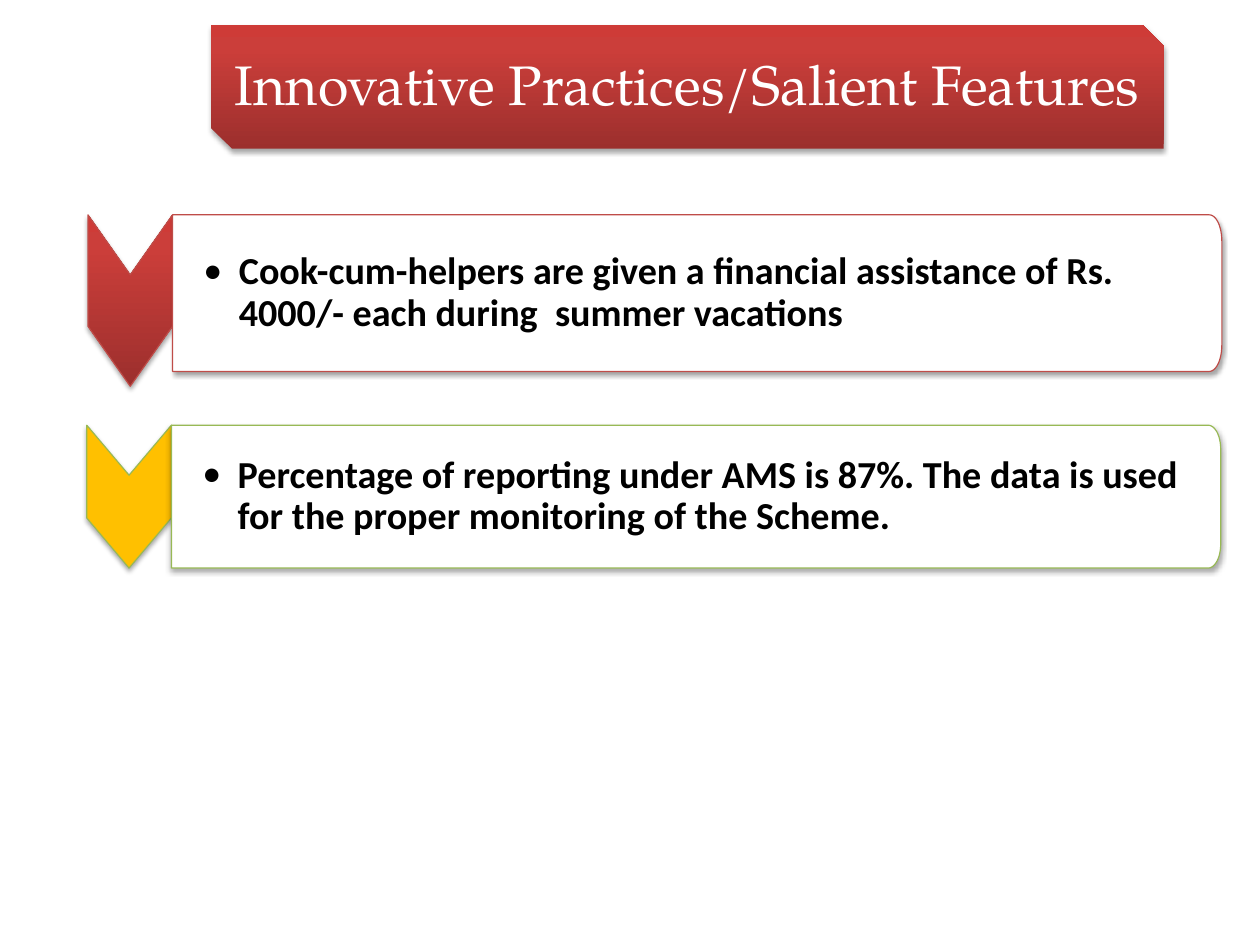
from math import cos, pi, sin

from lxml.etree import SubElement as Sub
from pptx import Presentation
from pptx.dml.color import RGBColor
from pptx.enum.shapes import MSO_SHAPE as Shape
from pptx.enum.text import MSO_ANCHOR as Anchor, PP_ALIGN as Align
from pptx.oxml.ns import qn
from pptx.util import Inches, Pt

WHITE = RGBColor(0xFF, 0xFF, 0xFF)
BLACK = RGBColor(0, 0, 0)
RED = RGBColor(0xBF, 0x4C, 0x48)
GREEN = RGBColor(0x98, 0xB9, 0x55)
GOLD = RGBColor(0xFF, 0xC0, 0x00)
FADE = [
    (0, RGBColor(0x9C, 0x2F, 0x2D)),
    (80, RGBColor(0xCB, 0x3E, 0x3A)),
    (100, RGBColor(0xCE, 0x3B, 0x37)),
]
WIDE = 0.74

ROWS = [
    (0.77, 1.88, 1.5, 1.37, None, RED,
     "Cook-cum-helpers are given a financial assistance of Rs. "
     "4000/- each during  summer vacations"),
    (0.76, 3.72, 1.25, 1.25, GOLD, GREEN,
     "Percentage of reporting under AMS is 87%. The data is used "
     "for the proper monitoring of the Scheme."),
]


def add_shadow(shape):
    shape.shadow.inherit = False
    effects = shape._element.spPr.find(qn("a:effectLst"))
    outer = Sub(effects, qn("a:outerShdw"), blurRad=str(Pt(3.1)),
                dist=str(Pt(1.8)), dir="5400000", rotWithShape="0")
    tint = Sub(outer, qn("a:srgbClr"), val=str(BLACK))
    Sub(tint, qn("a:alpha"), val="35000")


def fill_solid(shape, color):
    shape.fill.solid()
    shape.fill.fore_color.rgb = color


def fill_fade(shape):
    shape.fill.gradient()
    shape.fill.gradient_angle = 90
    stops = shape._element.spPr.find(qn("a:gradFill")).find(qn("a:gsLst"))
    for stop in list(stops):
        stops.remove(stop)
    for pos, color in FADE:
        stop = Sub(stops, qn("a:gs"), pos=str(pos * 1000))
        Sub(stop, qn("a:srgbClr"), val=str(color))


def set_line(shape, color):
    shape.line.color.rgb = color
    shape.line.width = Pt(0.75)


def write(shape, text, font, size, color, left, side):
    frame = shape.text_frame
    frame.word_wrap = True
    frame.vertical_anchor = Anchor.MIDDLE
    frame.margin_left, frame.margin_right = Inches(left), Inches(side)
    frame.margin_top = frame.margin_bottom = Inches(0.06)
    frame.text = text
    para = frame.paragraphs[0]
    face = para.runs[0].font
    face.name, face.size = font, Pt(size)
    face.color.rgb = color
    return para


def add_bullet(para):
    props = para._p.get_or_add_pPr()
    props.set("marL", str(Inches(0.31)))
    props.set("indent", str(Inches(-0.31)))
    tint = Sub(props, qn("a:buClr"))
    Sub(tint, qn("a:srgbClr"), val=str(BLACK))
    Sub(props, qn("a:buFont"), typeface="Calibri")
    Sub(props, qn("a:buChar"), char="•")


def add_outline(slide, points):
    spots = [(Inches(x), Inches(y)) for x, y in points]
    form = slide.shapes.build_freeform(*spots[0])
    form.add_line_segments(spots[1:], close=True)
    return form.convert_to_shape()


def add_title(slide, text):
    box = slide.shapes.add_shape(Shape.SNIP_2_DIAG_RECTANGLE, Inches(1.85),
                                 Inches(0.22), Inches(8.33), Inches(1.08))
    fill_fade(box)
    box.line.fill.background()
    add_shadow(box)
    para = write(box, text, "TeX Gyre Pagella", 35, WHITE, 0.11, 0.11)
    para.alignment = Align.CENTER
    para.line_spacing = 0.93


def add_arrow(slide, left, top, high, color, edge):
    notch = 0.35 * high
    mid, right, low = left + WIDE / 2, left + WIDE, top + high
    arrow = add_outline(slide, [
        (left, top), (mid, top + notch), (right, top),
        (right, low - notch), (mid, low), (left, low - notch)])
    if color is None:
        fill_fade(arrow)
    else:
        fill_solid(arrow, color)
    set_line(arrow, edge)
    add_shadow(arrow)


def add_panel(slide, left, top, high, edge, text):
    right, low = left + 9.18, top + high
    wide, tall = 0.11, high / 6
    turns = [step * pi / 24 for step in range(13)]
    upper = [(right - wide + wide * sin(t), top + tall - tall * cos(t))
             for t in turns]
    lower = [(x, top + low - y) for x, y in reversed(upper)]
    panel = add_outline(slide, [(left, top), *upper, *lower, (left, low)])
    fill_solid(panel, WHITE)
    set_line(panel, edge)
    add_shadow(panel)
    para = write(panel, text, "Calibri", 24, BLACK, 0.27, 0.06)
    para.alignment = Align.LEFT
    para.line_spacing = 0.9
    add_bullet(para)
    para.runs[0].font.bold = True


def main():
    deck = Presentation()
    deck.slide_width = Inches(28 / 2.54)
    deck.slide_height = Inches(21 / 2.54)
    slide = deck.slides.add_slide(deck.slide_layouts[6])
    add_title(slide, "Innovative Practices/Salient Features")
    for left, top, high, body, color, edge, text in ROWS:
        add_arrow(slide, left, top, high, color, edge)
        add_panel(slide, left + WIDE, top, body, edge, text)
    deck.save("out.pptx")


if __name__ == "__main__":
    main()
